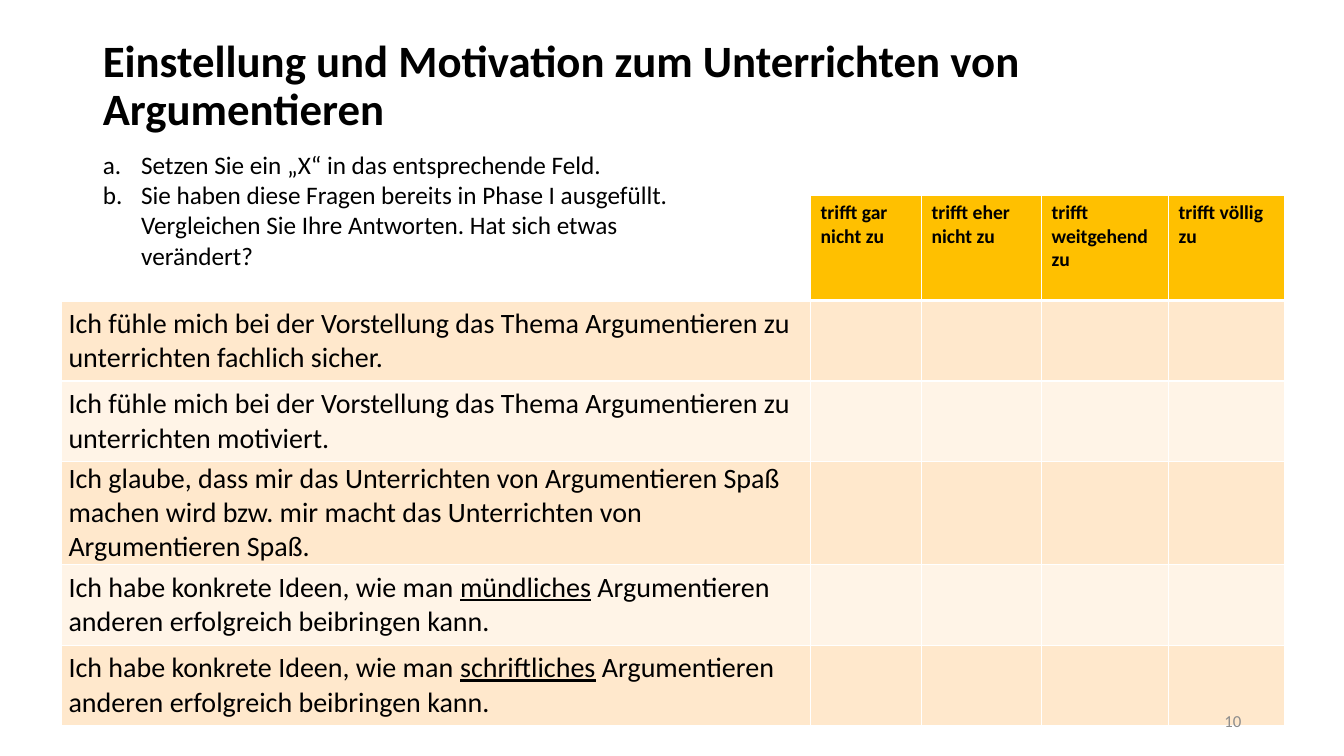
from lxml.etree import SubElement
from pptx import Presentation
from pptx.dml.color import RGBColor
from pptx.enum.text import MSO_ANCHOR, MSO_AUTO_SIZE, PP_ALIGN
from pptx.oxml import parse_xml
from pptx.oxml.ns import nsdecls, qn
from pptx.util import Inches, Pt

WIDTH, HEIGHT = 13.33, 7.5
MARGIN = 0.92
FONT = "Calibri"
HEADER_FILL, BANDS = "FFC000", ("FFE8CC", "FFF4E7")

TITLE = "Einstellung und Motivation zum Unterrichten von Argumentieren"
TASKS = [
    "Setzen Sie ein „X“ in das entsprechende Feld.",
    "Sie haben diese Fragen bereits in Phase I ausgefüllt. "
    "Vergleichen Sie Ihre Antworten. Hat sich etwas verändert?",
]
SCALE = ["trifft gar nicht zu", "trifft eher nicht zu",
         "trifft weitgehend zu", "trifft völlig zu"]
IDEAS = "Ich habe konkrete Ideen, wie man "
TEACH = " Argumentieren anderen erfolgreich beibringen kann."
# Each statement is a list of parts; every second part is underlined
STATEMENTS = [
    ["Ich fühle mich bei der Vorstellung das Thema Argumentieren zu "
     "unterrichten fachlich sicher."],
    ["Ich fühle mich bei der Vorstellung das Thema Argumentieren zu "
     "unterrichten motiviert."],
    ["Ich glaube, dass mir das Unterrichten von Argumentieren Spaß machen "
     "wird bzw. mir macht das Unterrichten von Argumentieren Spaß."],
    [IDEAS, "mündliches", TEACH],
    [IDEAS, "schriftliches", TEACH],
]
COLUMNS = [7.43, 1.1, 1.19, 1.26, 1.15]
ROWS = [1.04] + [0.8] * len(STATEMENTS)


def rgb(value):
    return RGBColor.from_string(value)


def set_all(obj, values):
    for name, value in values.items():
        setattr(obj, name, value)


def place(sp, left, top, width, height):
    set_all(sp, {"left": Inches(left), "top": Inches(top),
                 "width": Inches(width), "height": Inches(height)})


def add_run(p, text, size, color="000000", **font):
    r = p.add_run()
    r.text = text
    set_all(r.font, {"name": FONT, "size": Pt(size), **font})
    r.font.color.rgb = rgb(color)


def fill_title(sp):
    place(sp, MARGIN, 0.4, 11.85, 0.93)
    tf = sp.text_frame
    set_all(tf, {"word_wrap": True, "auto_size": MSO_AUTO_SIZE.NONE,
                 "vertical_anchor": MSO_ANCHOR.MIDDLE})
    p = tf.paragraphs[0]
    set_all(p, {"alignment": PP_ALIGN.LEFT, "line_spacing": 0.9})
    add_run(p, TITLE, 32, bold=True)


def fill_tasks(sp):
    place(sp, MARGIN, 1.43, 5.97, 1.31)
    tf = sp.text_frame
    set_all(tf, {"word_wrap": True, "vertical_anchor": MSO_ANCHOR.TOP,
                 "auto_size": MSO_AUTO_SIZE.SHAPE_TO_FIT_TEXT})
    for i, task in enumerate(TASKS):
        p = tf.add_paragraph() if i else tf.paragraphs[0]
        pPr = p._p.get_or_add_pPr()
        pPr.set("marL", str(Inches(0.38)))
        pPr.set("indent", str(-Inches(0.38)))
        SubElement(pPr, qn("a:buFont"), typeface=FONT)
        SubElement(pPr, qn("a:buAutoNum"), type="alphaLcPeriod")
        set_all(p, {"space_before": Pt(0), "alignment": PP_ALIGN.LEFT})
        add_run(p, task, 18)


def style_cell(cell, color, top=1, bottom=1):
    cell.fill.solid()
    cell.fill.fore_color.rgb = rgb(color)
    tcPr = cell._tc.get_or_add_tcPr()
    widths = {"lnL": 1, "lnR": 1, "lnT": top, "lnB": bottom}
    for i, (side, width) in enumerate(widths.items()):
        tcPr.insert(i, parse_xml(
            f'<a:{side} {nsdecls("a")} w="{Pt(width)}"><a:solidFill>'
            f'<a:srgbClr val="FFFFFF"/></a:solidFill></a:{side}>'))


def add_statement(cell, parts):
    set_all(cell, {"vertical_anchor": MSO_ANCHOR.MIDDLE,
                   "margin_left": Inches(0.07), "margin_right": Inches(0.07),
                   "margin_top": 0, "margin_bottom": 0})
    for i, part in enumerate(parts):
        add_run(cell.text_frame.paragraphs[0], part, 20, bold=False,
                underline=i % 2 == 1)


def add_questionnaire(slide):
    table = slide.shapes.add_table(
        len(ROWS), len(COLUMNS), Inches(0.61), Inches(1.94),
        Inches(sum(COLUMNS)), Inches(sum(ROWS))).table
    for column, width in zip(table.columns, COLUMNS):
        column.width = Inches(width)
    for row, height in zip(table.rows, ROWS):
        row.height = Inches(height)

    # Header row
    for c in range(len(COLUMNS)):
        cell = table.cell(0, c)
        style_cell(cell, HEADER_FILL if c else "FFFFFF", bottom=3)
        if c:
            add_run(cell.text_frame.paragraphs[0], SCALE[c - 1], 14, bold=True)

    # Banded statements with empty answer fields
    for n, parts in enumerate(STATEMENTS):
        for c in range(len(COLUMNS)):
            style_cell(table.cell(n + 1, c), BANDS[n % 2], top=1 if n else 3)
        add_statement(table.cell(n + 1, 0), parts)


def add_page_number(slide, number):
    sp = slide.shapes.add_textbox(0, 0, 0, 0)
    place(sp, WIDTH - MARGIN - 3, 6.95, 3, 0.4)
    tf = sp.text_frame
    set_all(tf, {"word_wrap": True, "vertical_anchor": MSO_ANCHOR.MIDDLE})
    p = tf.paragraphs[0]
    p.alignment = PP_ALIGN.RIGHT
    add_run(p, number, 12, "8C8C8C")


def main():
    prs = Presentation()
    set_all(prs, {"slide_width": Inches(WIDTH), "slide_height": Inches(HEIGHT)})
    slide = prs.slides.add_slide(prs.slide_layouts[1])
    title, tasks = slide.placeholders

    fill_title(title)
    add_questionnaire(slide)
    # The task list lies over the blank corner cell of the table
    fill_tasks(tasks)
    slide.shapes._spTree.append(tasks._element)
    add_page_number(slide, "10")
    prs.save("out.pptx")


if __name__ == "__main__":
    main()
